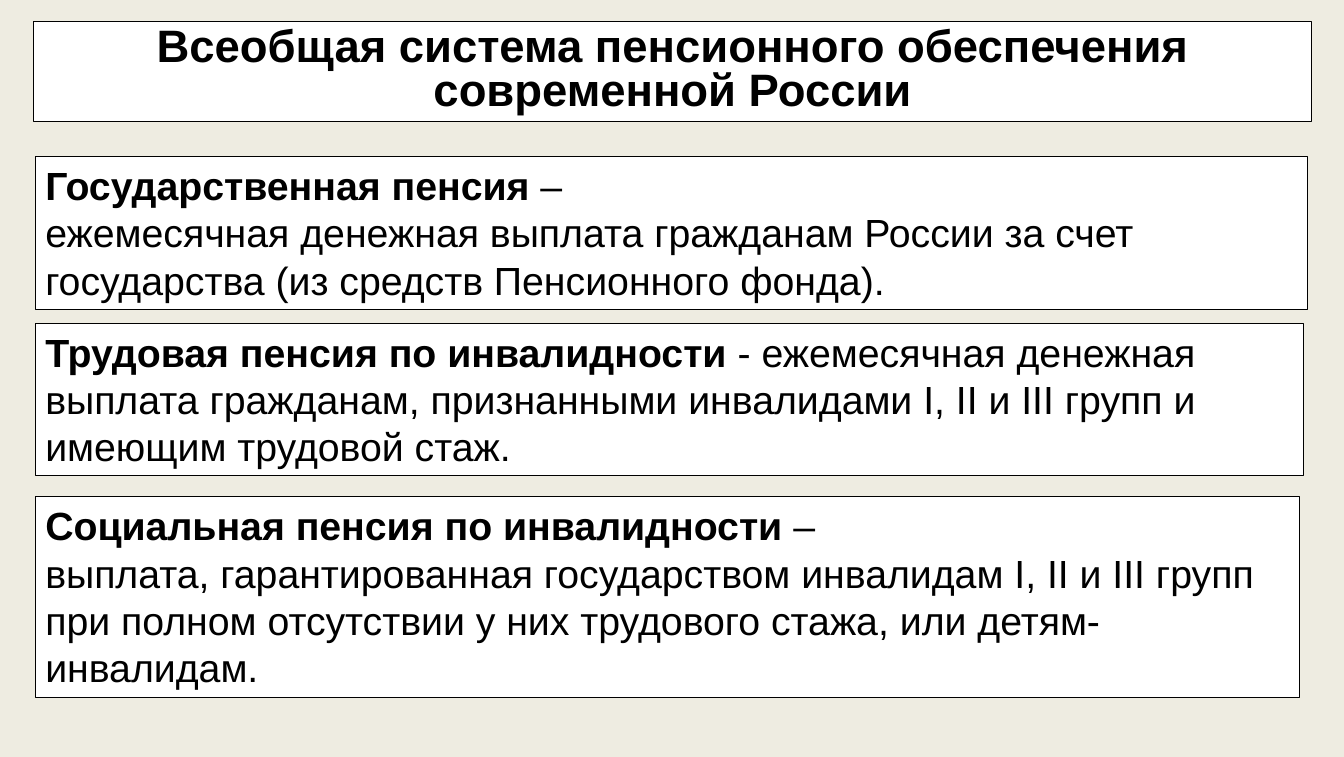
"""Build a slide defining the kinds of pension in Russia."""
from pptx import Presentation
from pptx.dml.color import RGBColor
from pptx.enum.text import MSO_ANCHOR, MSO_AUTO_SIZE, PP_ALIGN
from pptx.util import Cm, Pt

CENTER, LEFT = PP_ALIGN.CENTER, PP_ALIGN.LEFT
MIDDLE, TOP = MSO_ANCHOR.MIDDLE, MSO_ANCHOR.TOP
NO_FIT = MSO_AUTO_SIZE.NONE
TITLE_ONLY = 5
FONT = "Arial"
COLORS = {"background": "EEECE1", "panel": "FFFFFF", "ink": "000000"}

HEADING = "Всеобщая система пенсионного обеспечения современной России"
HEADING_BOX = (0.84, 0.53, 32.16, 2.54)
PANEL_LEFT = 0.89
PENSIONS = [
    {"term": "Государственная пенсия ",
     "lines": ["–", "ежемесячная денежная выплата гражданам России за счет "
               "государства (из средств Пенсионного фонда)."],
     "top": 3.94, "width": 32, "height": 3.84},
    {"term": "Трудовая пенсия по инвалидности ",
     "lines": ["- ежемесячная денежная выплата гражданам, признанными "
               "инвалидами I, II и III групп и имеющим трудовой стаж."],
     "top": 8.13, "width": 31.9, "height": 3.84},
    {"term": "Социальная пенсия по инвалидности ",
     "lines": ["–", "выплата, гарантированная государством инвалидам I, II и III "
               "групп при полном отсутствии у них трудового стажа, или "
               "детям-инвалидам."],
     "top": 12.5, "width": 31.8, "height": 5.05},
]


def color(name):
    return RGBColor.from_string(COLORS[name])


def style_panel(panel, anchor):
    panel.fill.solid()
    panel.fill.fore_color.rgb = color("panel")
    panel.line.color.rgb = color("ink")
    panel.line.width = Pt(0.75)
    frame = panel.text_frame
    frame.word_wrap = True
    frame.auto_size = NO_FIT
    frame.vertical_anchor = anchor


def style_run(run, size, bold):
    run.font.name = FONT
    run.font.size = Pt(size)
    run.font.bold = bold
    run.font.color.rgb = color("ink")


def add_heading(slide):
    heading = slide.shapes.title
    heading.left, heading.top, heading.width, heading.height = map(Cm, HEADING_BOX)
    heading.text_frame.text = HEADING
    style_panel(heading, MIDDLE)
    paragraph = heading.text_frame.paragraphs[0]
    paragraph.alignment = CENTER
    paragraph.line_spacing = 0.8
    style_run(paragraph.runs[0], 32.4, True)


def add_pension(slide, pension):
    panel = slide.shapes.add_textbox(
        Cm(PANEL_LEFT), Cm(pension["top"]), Cm(pension["width"]), Cm(pension["height"]))
    style_panel(panel, TOP)
    paragraph = panel.text_frame.paragraphs[0]
    paragraph.alignment = LEFT
    paragraph.text = pension["term"]
    style_run(paragraph.runs[0], 28, True)
    for index, line in enumerate(pension["lines"]):
        if index:
            paragraph.add_line_break()
        definition = paragraph.add_run()
        definition.text = line
        style_run(definition, 28, False)


def main():
    prs = Presentation()
    prs.slide_width, prs.slide_height = Cm(33.81), Cm(19.05)
    slide = prs.slides.add_slide(prs.slide_layouts[TITLE_ONLY])
    slide.background.fill.solid()
    slide.background.fill.fore_color.rgb = color("background")
    add_heading(slide)
    for pension in PENSIONS:
        add_pension(slide, pension)
    prs.save("out.pptx")


if __name__ == "__main__":
    main()
